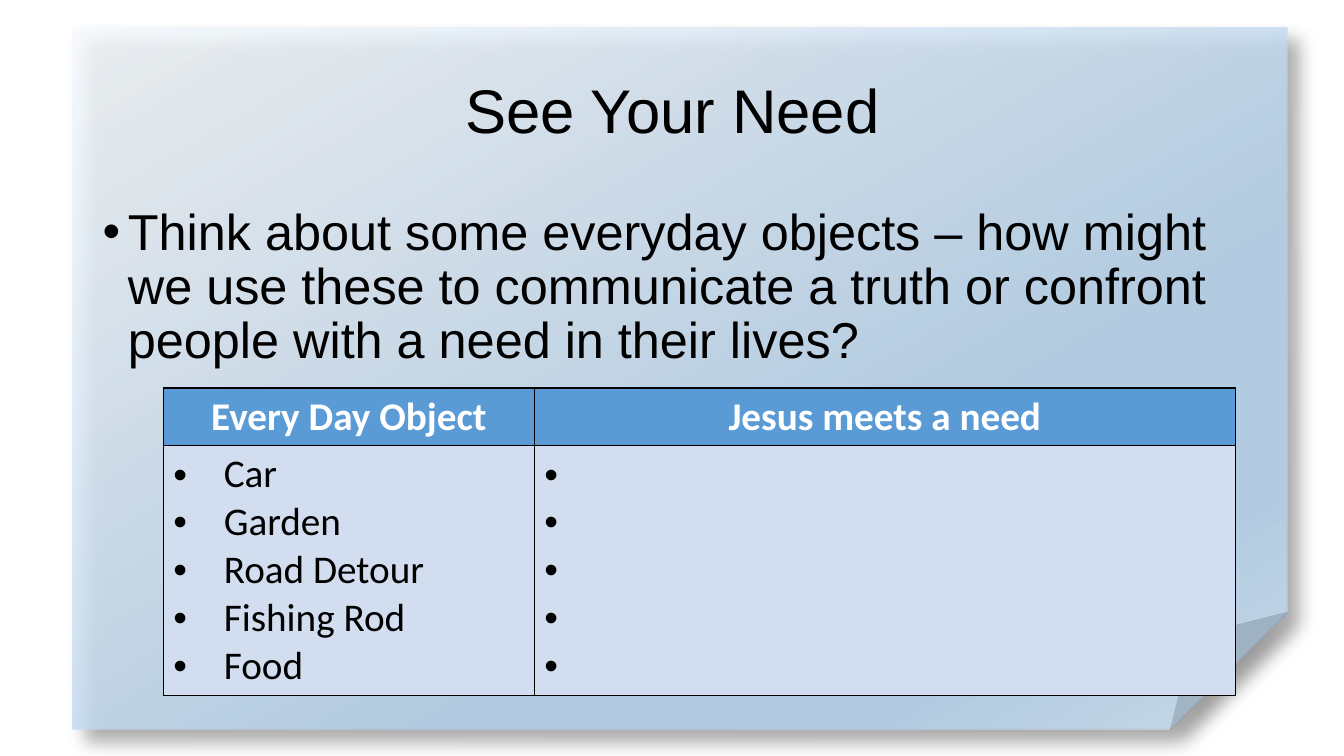
"""Build the "See Your Need" slide: a folded note with a question and a table."""
from lxml.etree import SubElement
from pptx import Presentation
from pptx.dml.color import RGBColor
from pptx.enum.shapes import MSO_SHAPE as Shape
from pptx.enum.text import MSO_ANCHOR as Anchor, PP_ALIGN as Align
from pptx.oxml import parse_xml
from pptx.oxml.ns import nsdecls, qn
from pptx.util import Inches, Pt

BLACK = RGBColor(0x00, 0x00, 0x00)
WHITE = RGBColor(0xFF, 0xFF, 0xFF)
HEADER_BLUE = RGBColor(0x5B, 0x9B, 0xD5)
BODY_BLUE = RGBColor(0xD2, 0xDE, 0xEF)
NOTE_PALE = RGBColor(0xF7, 0xFA, 0xFD)
NOTE_BLUE = RGBColor(0xB5, 0xD2, 0xEC)
NOTE_LIGHT = RGBColor(0xCE, 0xE1, 0xF2)
NOTE_STOPS = [(0, NOTE_PALE, 83), (64, NOTE_BLUE, 82),
              (83, NOTE_BLUE, 84), (100, NOTE_LIGHT, 84)]

QUESTION = ("Think about some everyday objects – how might we use these to "
            "communicate a truth or confront people with a need in their lives?")
HEADERS = ["Every Day Object", "Jesus meets a need"]
OBJECTS = ["Car", "Garden", "Road Detour", "Fishing Rod", "Food"]


def add_text(paragraph, text, font, size, color, bold=False):
    """Add one formatted run to a paragraph."""
    run = paragraph.add_run()
    run.text = text
    run.font.name = font
    run.font.size = Pt(size)
    run.font.bold = bold
    run.font.color.rgb = color


def add_bullet(paragraph, indent):
    """Give a paragraph a round bullet with a hanging indent."""
    properties = paragraph._p.get_or_add_pPr()
    properties.set("marL", str(Inches(indent)))
    properties.set("indent", str(-Inches(indent)))
    SubElement(properties, qn("a:buFont"), typeface="Arial")
    SubElement(properties, qn("a:buChar"), char="•")


def add_note(slide):
    """Draw the folded note behind everything else."""
    note = slide.shapes.add_shape(Shape.FOLDED_CORNER, Inches(0.72), Inches(0.27),
                                  Inches(12.05), Inches(6.97))
    note.line.fill.background()
    stops = "".join(
        f'<a:gs pos="{position * 1000}"><a:srgbClr val="{color}">'
        f'<a:alpha val="{opacity * 1000}"/></a:srgbClr></a:gs>'
        for position, color, opacity in NOTE_STOPS)
    gradient = parse_xml(
        f'<a:gradFill {nsdecls("a")} rotWithShape="1"><a:gsLst>{stops}</a:gsLst>'
        f'<a:lin ang="{60 * 60000}" scaled="0"/></a:gradFill>')
    shadow = parse_xml(
        f'<a:effectLst {nsdecls("a")}><a:outerShdw blurRad="{Pt(13)}" dist="{Pt(13)}" '
        f'dir="{45 * 60000}" algn="tl" rotWithShape="0"><a:srgbClr val="{BLACK}">'
        '<a:alpha val="40000"/></a:srgbClr></a:outerShdw></a:effectLst>')
    outline = note.line._get_or_add_ln()
    outline.addprevious(gradient)
    outline.addnext(shadow)
    slide.shapes.title._element.addprevious(note._element)


def add_title(slide):
    """Place and format the title placeholder."""
    title = slide.shapes.title
    title.left, title.top = Inches(0.92), Inches(0.4)
    title.width, title.height = Inches(11.5), Inches(1.45)
    title.text_frame.vertical_anchor = Anchor.MIDDLE
    heading = title.text_frame.paragraphs[0]
    heading.alignment = Align.CENTER
    heading.line_spacing = 0.9
    add_text(heading, "See Your Need", "Arial", 44, BLACK)


def add_question(slide):
    """Add the bulleted question."""
    box = slide.shapes.add_textbox(Inches(0.92), Inches(2), Inches(11.5), Inches(4.76))
    box.text_frame.word_wrap = True
    question = box.text_frame.paragraphs[0]
    add_bullet(question, 0.25)
    question.line_spacing = 0.9
    add_text(question, QUESTION, "Arial", 36, BLACK)


def style_cell(cell, color):
    """Fill a cell and give it thin black borders."""
    cell.fill.solid()
    cell.fill.fore_color.rgb = color
    for index, side in enumerate("LRTB"):
        border = parse_xml(
            f'<a:ln{side} {nsdecls("a")} w="{Pt(1)}"><a:solidFill>'
            f'<a:srgbClr val="{BLACK}"/></a:solidFill></a:ln{side}>')
        cell._tc.get_or_add_tcPr().insert(index, border)


def fill_list(cell, items):
    """Write one bulleted paragraph per item."""
    frame = cell.text_frame
    for index, item in enumerate(items):
        entry = frame.add_paragraph() if index else frame.paragraphs[0]
        add_bullet(entry, 0.5)
        add_text(entry, item, "Calibri", 28, BLACK)


def add_needs_table(slide):
    """Add the table of objects and the needs to be filled in."""
    needs = slide.shapes.add_table(2, 2, Inches(1.62), Inches(3.85),
                                   Inches(10.63), Inches(3.05)).table
    for column, width in zip(needs.columns, (3.68, 6.95)):
        column.width = Inches(width)
    for row, height in zip(needs.rows, (0.57, 2.48)):
        row.height = Inches(height)
    open_answers = [" "] * len(OBJECTS)
    for column, (header, items) in enumerate(zip(HEADERS, (OBJECTS, open_answers))):
        header_cell, list_cell = needs.cell(0, column), needs.cell(1, column)
        style_cell(header_cell, HEADER_BLUE)
        style_cell(list_cell, BODY_BLUE)
        label = header_cell.text_frame.paragraphs[0]
        label.alignment = Align.CENTER
        add_text(label, header, "Calibri", 28, WHITE, bold=True)
        fill_list(list_cell, items)


def main():
    """Build and save the slide."""
    deck = Presentation()
    deck.slide_width, deck.slide_height = Inches(13.33), Inches(7.5)
    slide = deck.slides.add_slide(deck.slide_layouts[5])
    add_note(slide)
    add_title(slide)
    add_question(slide)
    add_needs_table(slide)
    deck.save("out.pptx")


if __name__ == "__main__":
    main()
